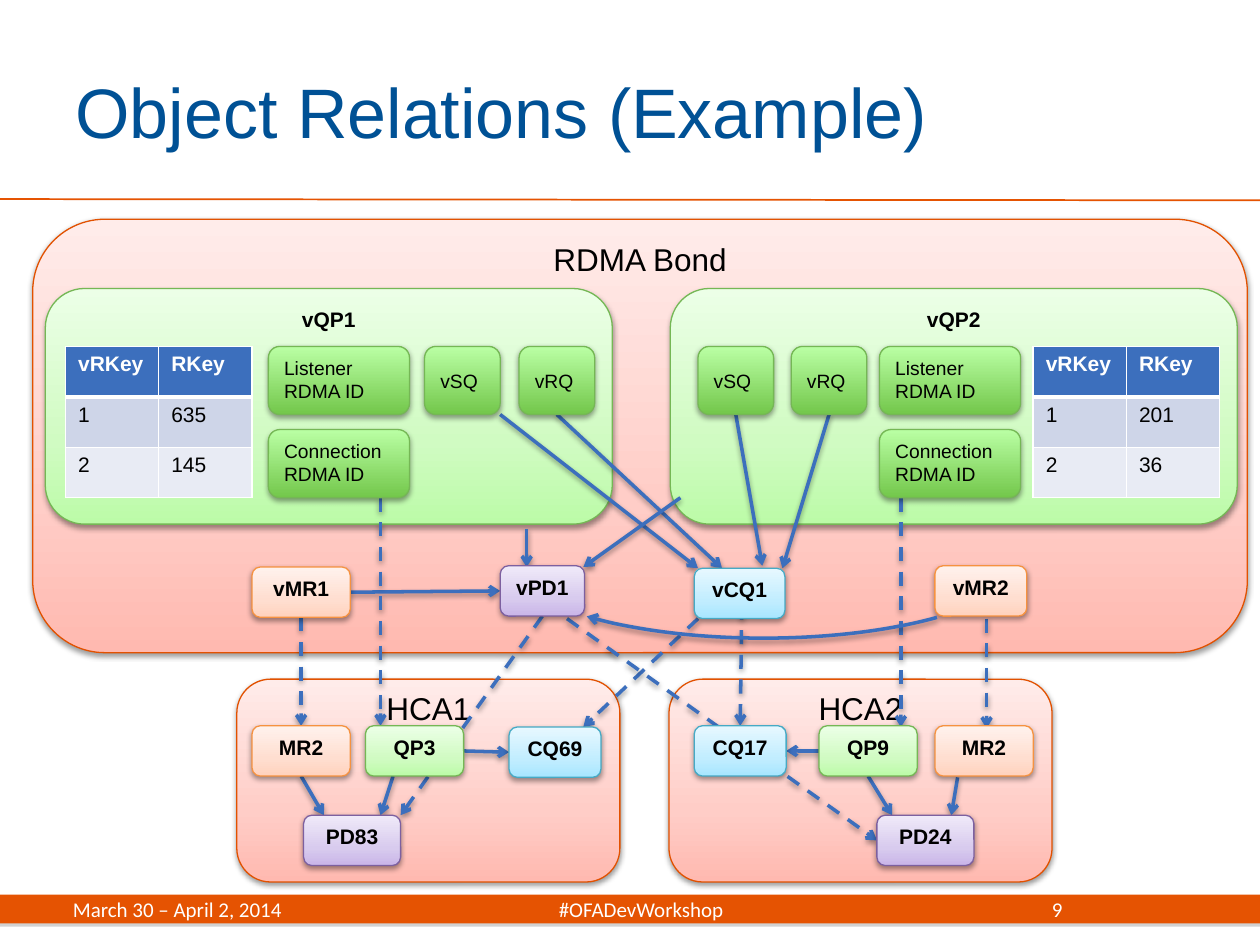
from dataclasses import dataclass
from typing import NamedTuple, Optional, Union

from lxml.etree import SubElement
from pptx import Presentation
from pptx.dml.color import RGBColor
from pptx.enum.dml import MSO_LINE_DASH_STYLE as Dash
from pptx.enum.shapes import MSO_CONNECTOR_TYPE as Connector, MSO_SHAPE as Preset
from pptx.enum.text import MSO_ANCHOR as Anchor, PP_ALIGN as Align
from pptx.oxml.ns import qn
from pptx.util import Pt

PX = 9144  # EMU: 100 px to the inch
TOP, LEFT, BOTTOM, RIGHT = range(4)


class Look(NamedTuple):
    stops: tuple[tuple[int, str], ...]  # percent from the bottom, colour
    line: str


@dataclass(frozen=True)
class Theme:
    orange: str = "E55302"
    blue: str = "005195"
    link: str = "3C6FBD"
    black: str = "000000"
    white: str = "FFFFFF"
    footer_shadow: str = "808080"
    bands: tuple[str, ...] = ("3C6FBD", "CED5E8", "E8EBF4")
    title: int = 40
    heading: int = 18
    label: int = 12
    detail: int = 11
    red: Look = Look(((0, "FFB9B0"), (35, "FFCDC7"), (100, "FFECEA")), "E25100")
    peach: Look = Look(((0, "FFD2BD"), (35, "FFDED0"), (100, "FFF2ED")), "F69240")
    violet: Look = Look(((0, "C9B5E8"), (35, "D8CBEE"), (100, "F0EAF9")), "7D60A0")
    green: Look = Look(((0, "BCFBA8"), (35, "D0FBC2"), (100, "ECFFE7")), "75B755")
    leaf: Look = Look(((0, "73C74B"), (100, "BAFFA4")), "75B755")
    sky: Look = Look(((0, "A7E6FF"), (35, "C1EDFF"), (100, "E7F8FF")), "46AAC5")


THEME = Theme()


class Node(NamedTuple):
    key: str
    text: str
    left: int
    top: int
    width: int
    height: int
    look: Look


class Point(NamedTuple):
    x: int
    y: int


class Side(NamedTuple):
    key: str
    site: int


class Link(NamedTuple):
    start: Union[Point, Side]
    end: Union[Point, Side]
    dashed: bool = False


class KeyTable(NamedTuple):
    left: int
    rows: tuple[tuple[str, str], ...]


CONTAINERS = [
    Node("bond", "RDMA Bond", 26, 174, 964, 344, THEME.red),
    Node("hca1", "HCA1", 188, 539, 304, 161, THEME.red),
    Node("hca2", "HCA2", 531, 539, 304, 161, THEME.red),
]
QUEUE_PAIRS = [
    Node("vqp1", "vQP1", 36, 229, 450, 187, THEME.green),
    Node("vqp2", "vQP2", 532, 229, 450, 187, THEME.green),
]
OBJECTS = [
    Node("vmr1", "vMR1", 200, 450, 78, 40, THEME.peach),
    Node("vpd1", "vPD1", 397, 449, 67, 40, THEME.violet),
    Node("vcq1", "vCQ1", 551, 451, 72, 40, THEME.sky),
    Node("vmr2", "vMR2", 742, 449, 73, 40, THEME.peach),
    Node("mr_a", "MR2", 200, 576, 78, 40, THEME.peach),
    Node("qp3", "QP3", 290, 576, 78, 40, THEME.green),
    Node("cq69", "CQ69", 404, 577, 73, 40, THEME.sky),
    Node("pd83", "PD83", 241, 647, 77, 40, THEME.violet),
    Node("cq17", "CQ17", 551, 576, 73, 40, THEME.sky),
    Node("qp9", "QP9", 650, 576, 78, 40, THEME.green),
    Node("mr_b", "MR2", 742, 576, 78, 40, THEME.peach),
    Node("pd24", "PD24", 696, 647, 77, 40, THEME.violet),
]
QUEUES = [Node(key, text, left, 275, 60, 54, THEME.leaf) for key, text, left in (
    ("vsq1", "vSQ", 337), ("vrq1", "vRQ", 412), ("vsq2", "vSQ", 554), ("vrq2", "vRQ", 628))]
IDENTIFIERS = [Node(f"{kind}{left}", f"{kind}\nRDMA ID", left, top, 112, 54, THEME.leaf)
               for left in (213, 698) for kind, top in (("Listener", 275), ("Connection", 341))]
LINKS = [
    Link(Side("qp9", BOTTOM), Point(708, 647)),
    Link(Point(760, 617), Point(755, 647)),
    Link(Side("qp9", LEFT), Side("cq17", RIGHT)),
    Link(Side("qp3", RIGHT), Side("cq69", LEFT)),
    Link(Side("mr_a", BOTTOM), Point(257, 647)),
    Link(Point(312, 616), Point(302, 647)),
    Link(Side("vrq1", BOTTOM), Point(573, 451)),
    Link(Point(397, 329), Point(554, 451)),
    Link(Side("vsq2", BOTTOM), Point(605, 449)),
    Link(Side("vrq2", BOTTOM), Point(621, 451)),
    Link(Point(418, 420), Point(418, 450)),
    Link(Point(540, 395), Point(463, 450)),
    Link(Side("vmr1", RIGHT), Side("vpd1", LEFT)),
    Link(Point(554, 491), Point(463, 577), True),
    Link(Point(589, 461), Side("cq17", TOP), True),
    Link(Side("vpd1", BOTTOM), Point(318, 647), True),
    Link(Point(450, 491), Side("pd24", LEFT), True),
    Link(Point(783, 491), Point(783, 578), True),
    Link(Side("vmr1", BOTTOM), Side("mr_a", TOP), True),
    Link(Point(715, 395), Point(715, 577), True),
    Link(Point(302, 395), Point(302, 576), True),
]
TABLES = [
    KeyTable(52, (("vRKey", "RKey"), ("1", "635"), ("2", "145"))),
    KeyTable(820, (("vRKey", "RKey"), ("1", "201"), ("2", "36"))),
]


def rgb(value: str) -> RGBColor:
    return RGBColor.from_string(value)


def frame(*lengths: int) -> list[int]:
    return [length * PX for length in lengths]


def write(text_frame, text: str, *, size: int, color: str = THEME.black, font: str = "Arial",
          bold: bool = False, align=Align.LEFT, anchor=Anchor.TOP, center_tab: int = 0) -> None:
    text_frame.word_wrap = True
    text_frame.vertical_anchor = anchor
    for index, line in enumerate(text.split("\n")):
        para = text_frame.add_paragraph() if index else text_frame.paragraphs[0]
        para.alignment = align
        if center_tab:
            tabs = SubElement(para._p.get_or_add_pPr(), qn("a:tabLst"))
            SubElement(tabs, qn("a:tab"), pos=str(center_tab * PX), algn="ctr")
        span = para.add_run()
        span.text = line
        span.font.name, span.font.size, span.font.bold = font, Pt(size), bold
        span.font.color.rgb = rgb(color)


def set_shadow(shape, opacity: int = 0, color: str = THEME.black, blur: int = 40000,
               distance: int = 20000) -> None:
    """Replace the inherited shadow; zero opacity leaves none."""
    effects = SubElement(shape._element.spPr, qn("a:effectLst"))
    if opacity:
        shadow = SubElement(effects, qn("a:outerShdw"), blurRad=str(blur), dist=str(distance),
                            dir="5400000", rotWithShape="0")
        tone = SubElement(shadow, qn("a:srgbClr"), val=color)
        SubElement(tone, qn("a:alpha"), val=str(opacity * 1000))


def draw_node(slide, node: Node, **text_format):
    box = slide.shapes.add_shape(Preset.ROUNDED_RECTANGLE, *frame(*node[2:6]))
    box.fill.gradient()
    box.fill.gradient_angle = 90
    stops = box._element.spPr.find(qn("a:gradFill")).find(qn("a:gsLst"))
    stops.clear()
    for percent, color in node.look.stops:
        stop = SubElement(stops, qn("a:gs"), pos=str(percent * 1000))
        SubElement(stop, qn("a:srgbClr"), val=color)
    box.line.color.rgb, box.line.width = rgb(node.look.line), Pt(0.75)
    set_shadow(box, 38)
    write(box.text_frame, node.text, **text_format)
    return box


def style_arrow(shape, dashed: bool = False) -> None:
    shape.line.color.rgb, shape.line.width = rgb(THEME.link), Pt(2)
    if dashed:
        shape.line.dash_style = Dash.DASH
    SubElement(shape.line._get_or_add_ln(), qn("a:tailEnd"), type="arrow")
    set_shadow(shape, 38)


def draw_link(slide, link: Link, boxes: dict):
    start, end = (frame(*stop) if isinstance(stop, Point) else (0, 0) for stop in link[:2])
    arrow = slide.shapes.add_connector(Connector.STRAIGHT, *start, *end)
    for stop, join in ((link.start, arrow.begin_connect), (link.end, arrow.end_connect)):
        if isinstance(stop, Side):
            join(boxes[stop.key], stop.site)
    style_arrow(arrow, link.dashed)
    return arrow


def draw_table(slide, table: KeyTable) -> None:
    grid = slide.shapes.add_table(3, 2, *frame(table.left, 275, 148, 120)).table
    for row, values in enumerate(table.rows):
        for column, value in enumerate(values):
            cell = grid.cell(row, column)
            header = row == 0
            for edge in "LRTB":
                thick = (row, edge) in ((0, "B"), (1, "T"))
                border = SubElement(cell._tc.get_or_add_tcPr(), qn(f"a:ln{edge}"),
                                    w=str(Pt(3 if thick else 1)))
                SubElement(SubElement(border, qn("a:solidFill")), qn("a:srgbClr"), val=THEME.white)
            cell.fill.solid()
            cell.fill.fore_color.rgb = rgb(THEME.bands[row])
            write(cell.text_frame, value, size=THEME.label, bold=header,
                  color=THEME.white if header else THEME.black)


def draw_page_frame(slide) -> None:
    bar = slide.shapes.add_shape(Preset.RECTANGLE, *frame(0, 710, 1000, 23))
    bar.fill.solid()
    bar.fill.fore_color.rgb = rgb(THEME.orange)
    bar.line.fill.background()
    set_shadow(bar, 35, THEME.footer_shadow, 0, 23000)
    rule = slide.shapes.add_connector(Connector.STRAIGHT, *frame(0, 158, 1000, 159))
    rule.line.color.rgb, rule.line.width = rgb(THEME.orange), Pt(1)
    set_shadow(rule)
    title = slide.shapes.title
    title.left, title.top, title.width, title.height = frame(50, 25, 817, 125)
    write(title.text_frame, "Object Relations (Example)", size=THEME.title, color=THEME.blue,
          anchor=Anchor.MIDDLE)
    for left, width, text, align, tab in (
            (48, 905, "March 30 – April 2, 2014\t#OFADevWorkshop", Align.LEFT, 451),
            (734, 119, "9", Align.RIGHT, 0)):
        box = slide.shapes.add_textbox(*frame(left, 710, width, 23))
        write(box.text_frame, text, size=THEME.label, color=THEME.white, font="Calibri",
              align=align, anchor=Anchor.MIDDLE, center_tab=tab)


def main() -> None:
    deck = Presentation()
    deck.slide_width, deck.slide_height = frame(1000, 750)
    slide = deck.slides.add_slide(deck.slide_layouts[5])
    draw_page_frame(slide)
    for node in CONTAINERS:
        box = draw_node(slide, node, size=THEME.heading, align=Align.CENTER)
        box.text_frame.margin_top = 0
    label = dict(size=THEME.label, bold=True, align=Align.CENTER)
    for node in QUEUE_PAIRS:
        draw_node(slide, node, **label)
    boxes = {node.key: draw_node(slide, node, **label) for node in OBJECTS}
    for nodes, anchor in ((QUEUES, Anchor.MIDDLE), (IDENTIFIERS, Anchor.TOP)):
        for node in nodes:
            boxes[node.key] = draw_node(slide, node, size=THEME.detail, anchor=anchor)
    for link in LINKS:  # links run behind the boxes they pass
        arrow = draw_link(slide, link, boxes)
        boxes[OBJECTS[0].key]._element.addprevious(arrow._element)
    curve = slide.shapes.add_shape(Preset.ARC, *frame(539, 230, 134, 419))
    curve.rotation = 90
    curve.adjustments[0], curve.adjustments[1] = 174.1, 42.29
    curve.fill.background()
    style_arrow(curve)
    for table in TABLES:
        draw_table(slide, table)
    deck.save("out.pptx")


if __name__ == "__main__":
    main()
